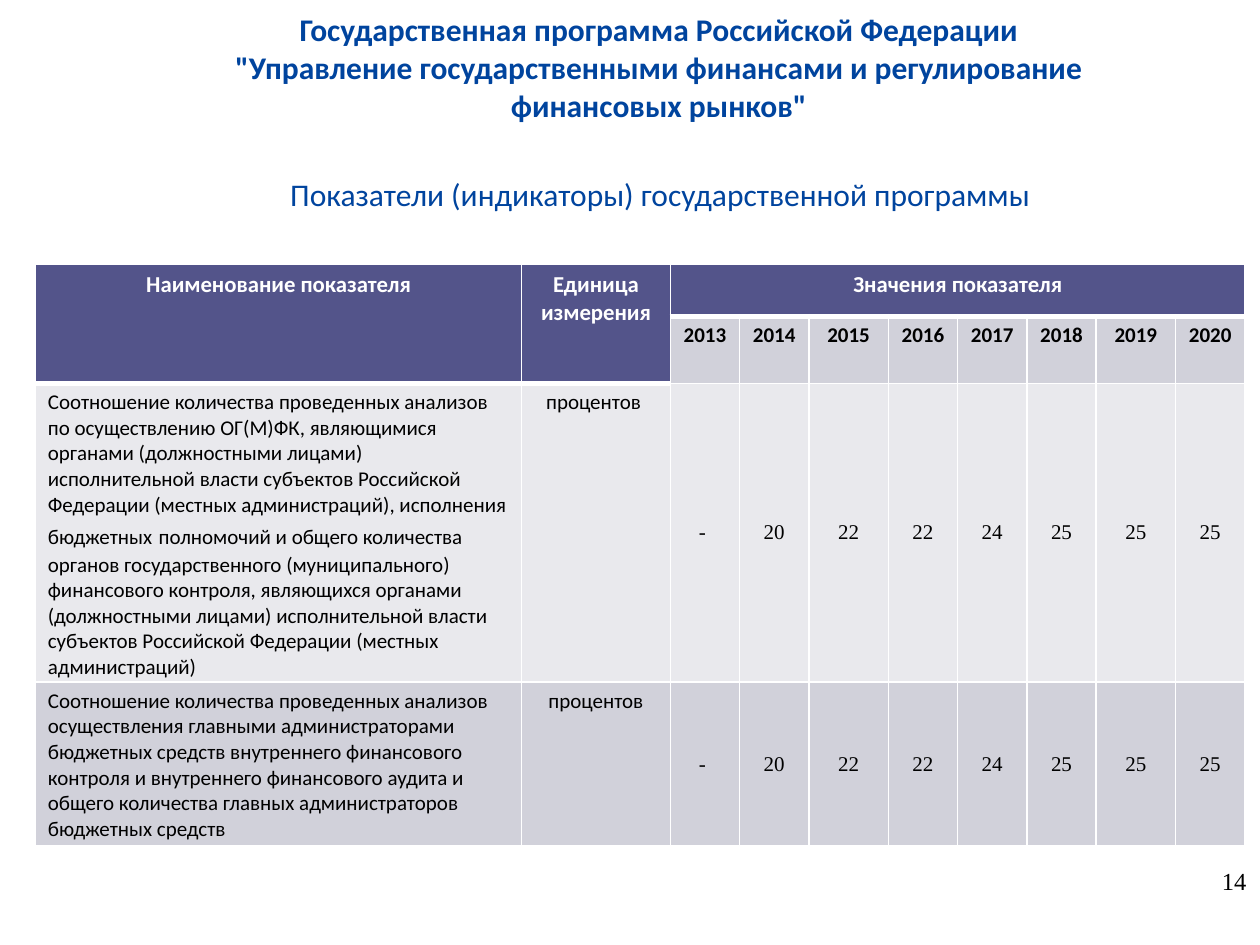
"""Build a slide with the indicator table of a state programme."""
from lxml import etree
from pptx import Presentation
from pptx.dml.color import RGBColor
from pptx.enum.text import MSO_ANCHOR, PP_ALIGN
from pptx.oxml.ns import qn
from pptx.util import Inches, Pt

LEFT, CENTER, RIGHT = PP_ALIGN.LEFT, PP_ALIGN.CENTER, PP_ALIGN.RIGHT
TOP, MIDDLE = MSO_ANCHOR.TOP, MSO_ANCHOR.MIDDLE
SANS, SERIF = "Calibri", "Times New Roman"

THEME = {
    "white": "FFFFFF",
    "header": "53548A",
    "light": "E9E9ED",
    "dark": "D1D1DA",
    "title": {"name": SANS, "size": Pt(18), "bold": True, "color": "00449E"},
    "subtitle": {"name": SANS, "size": Pt(18), "bold": False, "color": "00449E"},
    "heading": {"name": SANS, "size": Pt(13), "bold": True, "color": "FFFFFF"},
    "year": {"name": SANS, "size": Pt(12), "bold": True, "color": "000000"},
    "body": {"name": SANS, "size": Pt(12), "bold": False, "color": "000000"},
    "gap": {"name": SANS, "size": Pt(16), "bold": False, "color": "000000"},
    "value": {"name": SERIF, "size": Pt(12), "bold": False, "color": "000000"},
    "number": {"name": SERIF, "size": Pt(14), "bold": False, "color": "000000"},
}


def write_text(text_frame, runs, alignment):
    paragraph = text_frame.paragraphs[0]
    paragraph.alignment = alignment
    for text, style in runs:
        run = paragraph.add_run()
        run.text = text
        for name, value in THEME[style].items():
            if name == "color":
                run.font.color.rgb = RGBColor.from_string(value)
            else:
                setattr(run.font, name, value)


def format_cell(cell, fill, top_width, bottom_width):
    properties = cell._tc.get_or_add_tcPr()
    widths = {"a:lnL": 1, "a:lnR": 1, "a:lnT": top_width, "a:lnB": bottom_width}
    for tag, width in widths.items():
        line = etree.SubElement(properties, qn(tag), w=str(Pt(width)))
        solid = etree.SubElement(line, qn("a:solidFill"))
        etree.SubElement(solid, qn("a:srgbClr"), val=THEME["white"])
    cell.fill.solid()
    cell.fill.fore_color.rgb = RGBColor.from_string(THEME[fill])


presentation = Presentation()
presentation.slide_width, presentation.slide_height = Inches(10), Inches(7.5)
slide = presentation.slides.add_slide(presentation.slide_layouts[6])

text_boxes = [
    ((0.87, 1.34, 8.74, 0.4), "Показатели (индикаторы) государственной программы", "subtitle", CENTER),
    ((1.61, 0.03, 7.24, 1.01),
     'Государственная программа Российской Федерации "Управление государственными финансами '
     'и регулирование финансовых рынков"', "title", CENTER),
    ((9.52, 6.82, 0.47, 0.52), "14", "number", RIGHT),
]
for position, text, style, alignment in text_boxes:
    text_box = slide.shapes.add_textbox(*map(Inches, position))
    text_box.text_frame.word_wrap = True
    write_text(text_box.text_frame, [(text, style)], alignment)

column_widths = [3.86, 1.18, 0.55, 0.55, 0.63, 0.55, 0.55, 0.55, 0.63, 0.55]
row_heights = [0.41, 0.52, 2.37, 1.29]
frame = slide.shapes.add_table(len(row_heights), len(column_widths), Inches(0.28), Inches(2.1),
                               Inches(sum(column_widths)), Inches(sum(row_heights)))
table = frame.table
for column, width in zip(table.columns, column_widths):
    column.width = Inches(width)
for row, height in zip(table.rows, row_heights):
    row.height = Inches(height)

row_fills = ["header", "dark", "light", "dark"]
for row_index, row_fill in enumerate(row_fills):
    for column_index in range(len(column_widths)):
        tall_header = column_index < 2
        last_header_row = 1 if tall_header else 0
        fill = "header" if row_index <= last_header_row else row_fill
        top_width = 3 if row_index == last_header_row + 1 else 1
        bottom_width = 3 if row_index <= last_header_row else 1
        format_cell(table.cell(row_index, column_index), fill, top_width, bottom_width)

headings = [
    ("Наименование показателя", (0, 0), (1, 0)),
    ("Единица измерения", (0, 1), (1, 1)),
    ("Значения показателя", (0, 2), (0, 9)),
]
for text, first, last in headings:
    table.cell(*first).merge(table.cell(*last))
    write_text(table.cell(*first).text_frame, [(text, "heading")], CENTER)

for column_index, year in enumerate(range(2013, 2021), start=2):
    write_text(table.cell(1, column_index).text_frame, [(str(year), "year")], CENTER)

values = ["- ", "20", "22", "22", "24", "25", "25", "25"]
indicators = [
    ([("Соотношение количества проведенных анализов по осуществлению ОГ(М)ФК, являющимися органами "
       "(должностными лицами) исполнительной власти субъектов Российской Федерации (местных "
       "администраций), исполнения бюджетных", "body"),
      (" ", "gap"),
      ("полномочий и общего количества органов государственного (муниципального) финансового контроля, "
       "являющихся органами (должностными лицами) исполнительной власти субъектов Российской Федерации "
       "(местных администраций)", "body")], "процентов "),
    ([("Соотношение количества проведенных анализов осуществления главными администраторами бюджетных "
       "средств внутреннего финансового контроля и внутреннего финансового аудита и общего количества "
       "главных администраторов бюджетных средств", "body")], "процентов"),
]
for row_index, (name_runs, unit) in enumerate(indicators, start=2):
    contents = [(name_runs, LEFT, TOP), ([(unit, "body")], CENTER, TOP)]
    contents += [([(value, "value")], CENTER, MIDDLE) for value in values]
    for column_index, (runs, alignment, anchor) in enumerate(contents):
        cell = table.cell(row_index, column_index)
        cell.vertical_anchor = anchor
        write_text(cell.text_frame, runs, alignment)

presentation.save("out.pptx")
